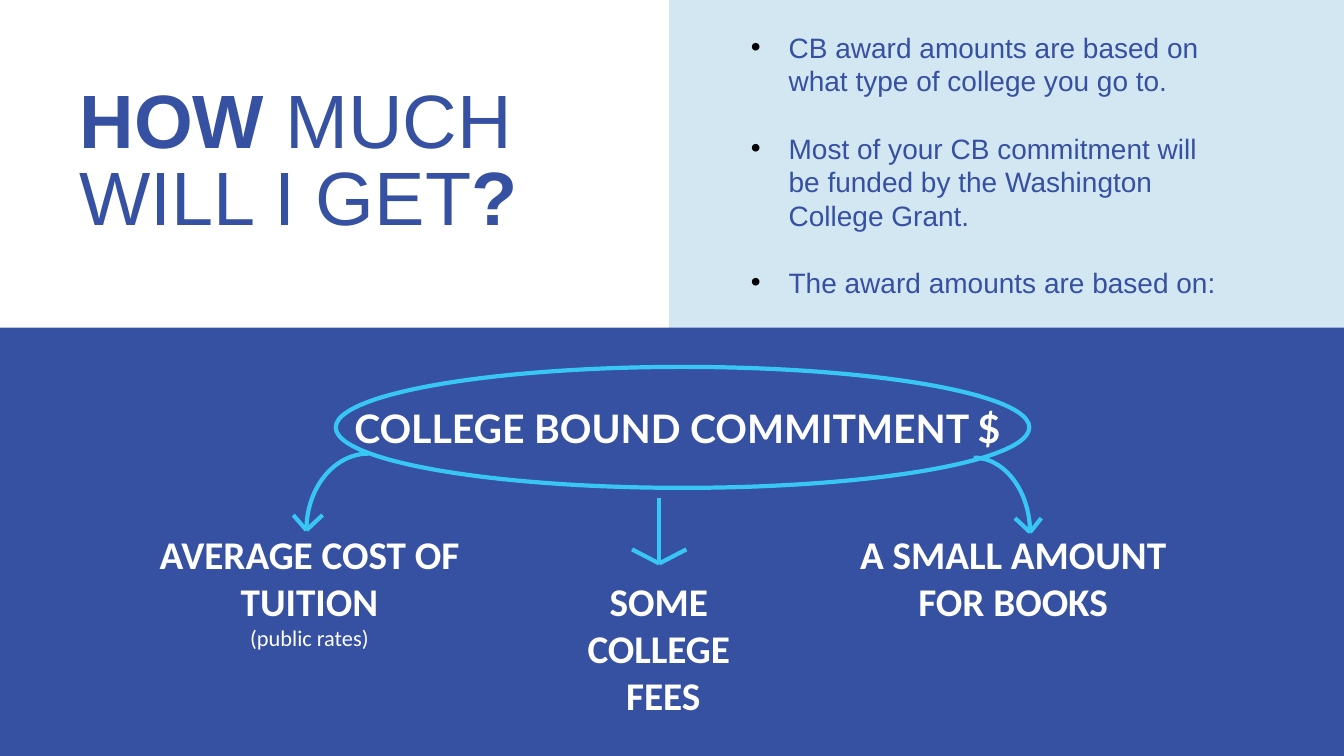
import pptx
import pptx.util
import pptx.dml.color
import pptx.enum.shapes
import pptx.enum.text
import pptx.oxml
import pptx.oxml.ns
from lxml import etree

Pt = pptx.util.Pt
RGBColor = pptx.dml.color.RGBColor
Shape = pptx.enum.shapes.MSO_SHAPE
Align = pptx.enum.text.PP_ALIGN
Anchor = pptx.enum.text.MSO_ANCHOR
AutoSize = pptx.enum.text.MSO_AUTO_SIZE
qn = pptx.oxml.ns.qn

BLUE = RGBColor(0x36, 0x50, 0xA2)
PALE_BLUE = RGBColor(0xD2, 0xE7, 0xF2)
CYAN = RGBColor(0x38, 0xC6, 0xF4)
WHITE = RGBColor(0xFF, 0xFF, 0xFF)


def add_run(paragraph, text, *, size, font, color, bold=False):
    run = paragraph.add_run()
    run.text = text
    run.font.size = Pt(size)
    run.font.name = font
    run.font.bold = bold
    run.font.color.rgb = color


def add_bullet(paragraph):
    properties = paragraph._p.get_or_add_pPr()
    properties.set("marL", str(Pt(27)))
    properties.set("indent", str(Pt(-27)))
    color = etree.SubElement(properties, qn("a:buClr"))
    etree.SubElement(color, qn("a:srgbClr"), val="000000")
    etree.SubElement(properties, qn("a:buFont"), typeface="Arial")
    etree.SubElement(properties, qn("a:buChar"), char="•")


class SlideBuilder:
    line_color = CYAN
    line_width = Pt(3)

    def __init__(self, slide):
        self.slide = slide

    def title(self, box, runs, bottom_inset):
        shape = self.slide.shapes.title
        shape.left, shape.top, shape.width, shape.height = map(Pt, box)
        frame = shape.text_frame
        frame.auto_size = AutoSize.NONE
        frame.word_wrap = True
        frame.vertical_anchor = Anchor.BOTTOM
        frame.margin_bottom = Pt(bottom_inset)
        paragraph = frame.paragraphs[0]
        paragraph.alignment = Align.LEFT
        paragraph.line_spacing = 0.85
        for text, bold in runs:
            add_run(paragraph, text, size=54, font="Arial", color=BLUE, bold=bold)

    def panel(self, box, color):
        shape = self.slide.shapes.add_shape(Shape.RECTANGLE, *map(Pt, box))
        shape.shadow.inherit = False
        shape.fill.solid()
        shape.fill.fore_color.rgb = color
        shape.line.fill.background()

    def outline(self, kind, box, mirrored=False):
        shape = self.slide.shapes.add_shape(kind, *map(Pt, box))
        shape.shadow.inherit = False
        shape.fill.background()
        shape.line.color.rgb = self.line_color
        shape.line.width = self.line_width
        if mirrored:
            shape._element.spPr.find(qn("a:xfrm")).set("flipH", "1")

    def line(self, start, end):
        connector = self.slide.shapes.add_connector(
            pptx.enum.shapes.MSO_CONNECTOR.STRAIGHT, *map(Pt, start + end))
        connector.line.color.rgb = self.line_color
        connector.line.width = self.line_width
        etree.SubElement(connector._element.spPr, qn("a:effectLst"))

    def arrowhead(self, tip, left, right, height):
        x, y = tip
        for offset in (-left, right):
            self.line((x + offset, y - height), tip)

    def text_box(self, box):
        shape = self.slide.shapes.add_textbox(*map(Pt, box))
        shape.text_frame.word_wrap = True
        return shape.text_frame

    def centered_text(self, box, lines, font):
        frame = self.text_box(box)
        for index, (text, size, bold) in enumerate(lines):
            paragraph = frame.add_paragraph() if index else frame.paragraphs[0]
            paragraph.alignment = Align.CENTER
            add_run(paragraph, text, size=size, font=font, color=WHITE, bold=bold)

    def bullets(self, box, items):
        frame = self.text_box(box)
        for index, text in enumerate(items):
            paragraph = frame.add_paragraph() if index else frame.paragraphs[0]
            paragraph.space_after = Pt(24)
            add_bullet(paragraph)
            add_run(paragraph, text, size=20, font="Arial", color=BLUE)


def main():
    presentation = pptx.Presentation()
    presentation.slide_width = Pt(960)
    presentation.slide_height = Pt(540)
    slide = presentation.slides.add_slide(presentation.slide_layouts[5])
    builder = SlideBuilder(slide)

    # Background panels
    builder.panel((478, 0, 482, 258), PALE_BLUE)
    builder.panel((0, 234, 960, 306), BLUE)

    # Title and explanation
    builder.title((49.7, 91.4, 411.8, 139),
                  [("HOW", True), (" MUCH WILL I GET", False), ("?", True)],
                  bottom_inset=58.4)
    builder.bullets((529.2, 18, 358.6, 201), [
        "CB award amounts are based on what type of college you go to.",
        "Most of your CB commitment will be funded by the Washington College Grant.",
        "The award amounts are based on:",
    ])

    # Commitment and its three parts
    builder.centered_text((44.6, 285.1, 878.4, 41),
                          [("COLLEGE BOUND COMMITMENT $", 28, True)], "Lato")
    parts = [
        (97.2, 375.1, 94.3, [("AVERAGE COST OF TUITION", 28, True),
                             ("(public rates)", 16, False)]),
        (349.9, 409, 108.7, [("SOME ", 28, True), ("COLLEGE ", 28, True),
                             ("FEES", 28, True)]),
        (599.8, 375.1, 74.9, [("A SMALL AMOUNT FOR BOOKS", 28, True)]),
    ]
    for left, top, height, lines in parts:
        builder.centered_text((left, top, 247.7, height), lines, "Calibri")

    # Ellipse and arrows
    builder.outline(Shape.OVAL, (239.8, 262.1, 495.4, 86.4))
    builder.outline(Shape.ARC, (655.2, 326.9, 80.6, 107.3))
    builder.arrowhead((735.8, 380.2), 10.8, 8, 10.1)
    builder.outline(Shape.ARC, (218.9, 324, 88.6, 109.4), mirrored=True)
    builder.arrowhead((218.9, 378.7), 9.4, 11.5, 10.8)
    builder.line((470.9, 355.7), (470.9, 402))
    builder.arrowhead((470.9, 402.5), 19.4, 19.4, 10.1)

    presentation.save("out.pptx")


if __name__ == "__main__":
    main()
